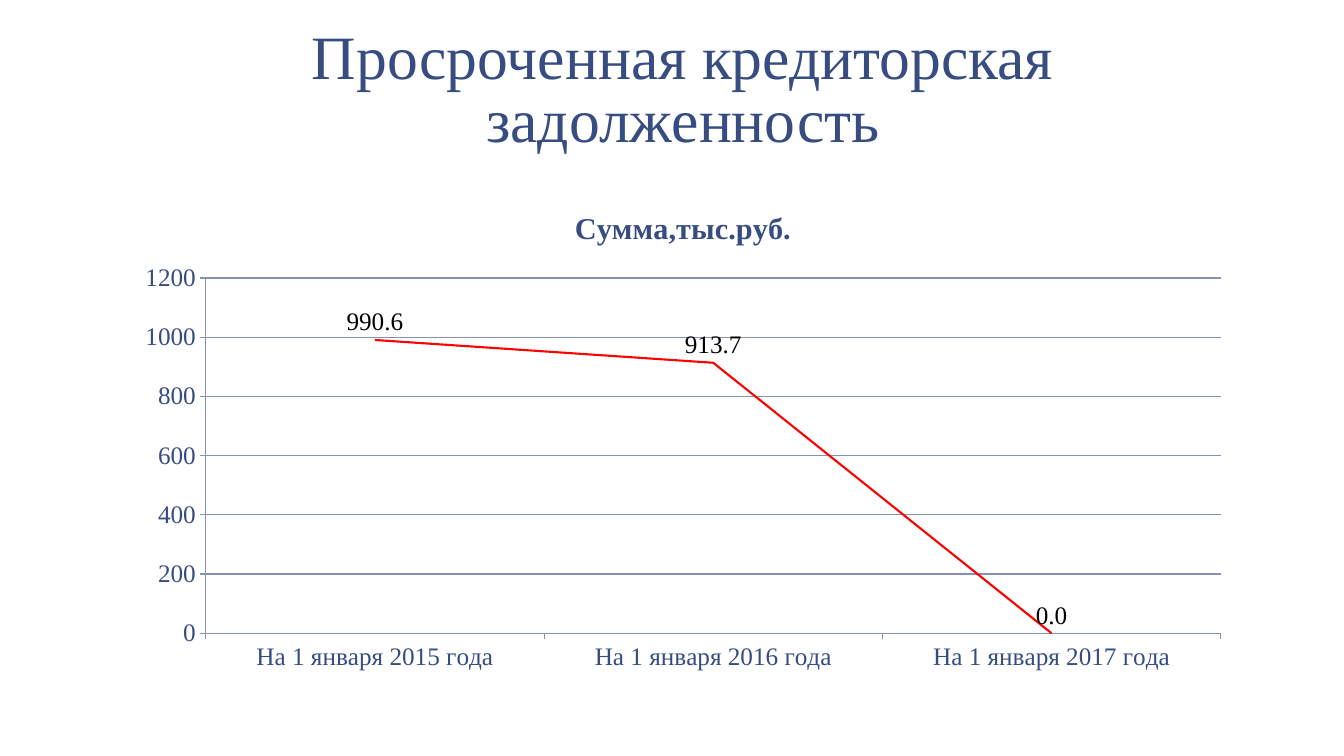
"""Build a slide with a line chart of overdue accounts payable."""
from pptx import Presentation
from pptx.chart.data import CategoryChartData
from pptx.dml.color import RGBColor
from pptx.enum.chart import XL_CHART_TYPE, XL_LABEL_POSITION, XL_MARKER_STYLE, XL_TICK_MARK
from pptx.enum.text import MSO_ANCHOR, PP_ALIGN
from pptx.util import Inches, Pt

TITLE = "Просроченная кредиторская задолженность"
SERIES = "Сумма,тыс.руб."
VALUES = {
    "На 1 января 2015 года": 990.6,
    "На 1 января 2016 года": 913.7,
    "На 1 января 2017 года": 0,
}
FONT = "Times New Roman"
BLUE, GRID, RED, BLACK = "374C81", "8791B1", "FF0000", "000000"
LEFT, WIDTH = 1.22, 11.11
MARGINS = {"margin_left": 0.13, "margin_right": 0.13, "margin_top": 0.07, "margin_bottom": 0.07}


def paint(color, value):
    color.rgb = RGBColor.from_string(value)


def style(font, size, color=BLUE, bold=False):
    for name, value in {"name": FONT, "size": Pt(size), "bold": bold}.items():
        setattr(font, name, value)
    paint(font.color, color)


def stroke(line, color, width):
    paint(line.color, color)
    line.width = Pt(width)


def place(top, height):
    return [Inches(v) for v in (LEFT, top, WIDTH, height)]


def add_title(s):
    sp = s.shapes.title
    sp.left, sp.top, sp.width, sp.height = place(0.08, 1.53)
    tf = sp.text_frame
    tf.word_wrap = True
    tf.vertical_anchor = MSO_ANCHOR.BOTTOM
    for name, value in MARGINS.items():
        setattr(tf, name, Inches(value))
    p = tf.paragraphs[0]
    p.alignment = PP_ALIGN.CENTER
    p.line_spacing = 0.85
    r = p.add_run()
    r.text = TITLE
    style(r.font, 44)


def add_debt_chart(s):
    data = CategoryChartData()
    data.categories = list(VALUES)
    data.add_series(SERIES, list(VALUES.values()))
    chart = s.shapes.add_chart(XL_CHART_TYPE.LINE, *place(1.86, 4.89), data).chart
    style(chart.font, 18)
    chart.has_legend = False
    chart.has_title = True
    p = chart.chart_title.text_frame.paragraphs[0]
    r = p.add_run()
    r.text = SERIES
    style(r.font, 21.6, bold=True)

    for axis in (chart.category_axis, chart.value_axis):
        axis.major_tick_mark = XL_TICK_MARK.OUTSIDE
        axis.minor_tick_mark = XL_TICK_MARK.NONE
        style(axis.tick_labels.font, 18)
        stroke(axis.format.line, GRID, 0.75)
    axis = chart.value_axis
    axis.minimum_scale, axis.maximum_scale, axis.major_unit = 0, 1200, 200
    axis.has_major_gridlines = True
    stroke(axis.major_gridlines.format.line, GRID, 0.75)

    plot = chart.plots[0]
    plot.vary_by_categories = False
    line = plot.series[0]
    line.smooth = False
    line.marker.style = XL_MARKER_STYLE.NONE
    stroke(line.format.line, RED, 1.5)
    labels = line.data_labels
    labels.show_value = True
    labels.position = XL_LABEL_POSITION.ABOVE
    labels.number_format = "#,##0.0"
    labels.number_format_is_linked = False
    style(labels.font, 18, BLACK)


def main():
    prs = Presentation()
    prs.slide_width, prs.slide_height = Inches(13.33), Inches(7.5)
    s = prs.slides.add_slide(prs.slide_layouts[5])
    add_title(s)
    add_debt_chart(s)
    prs.save("out.pptx")


if __name__ == "__main__":
    main()
